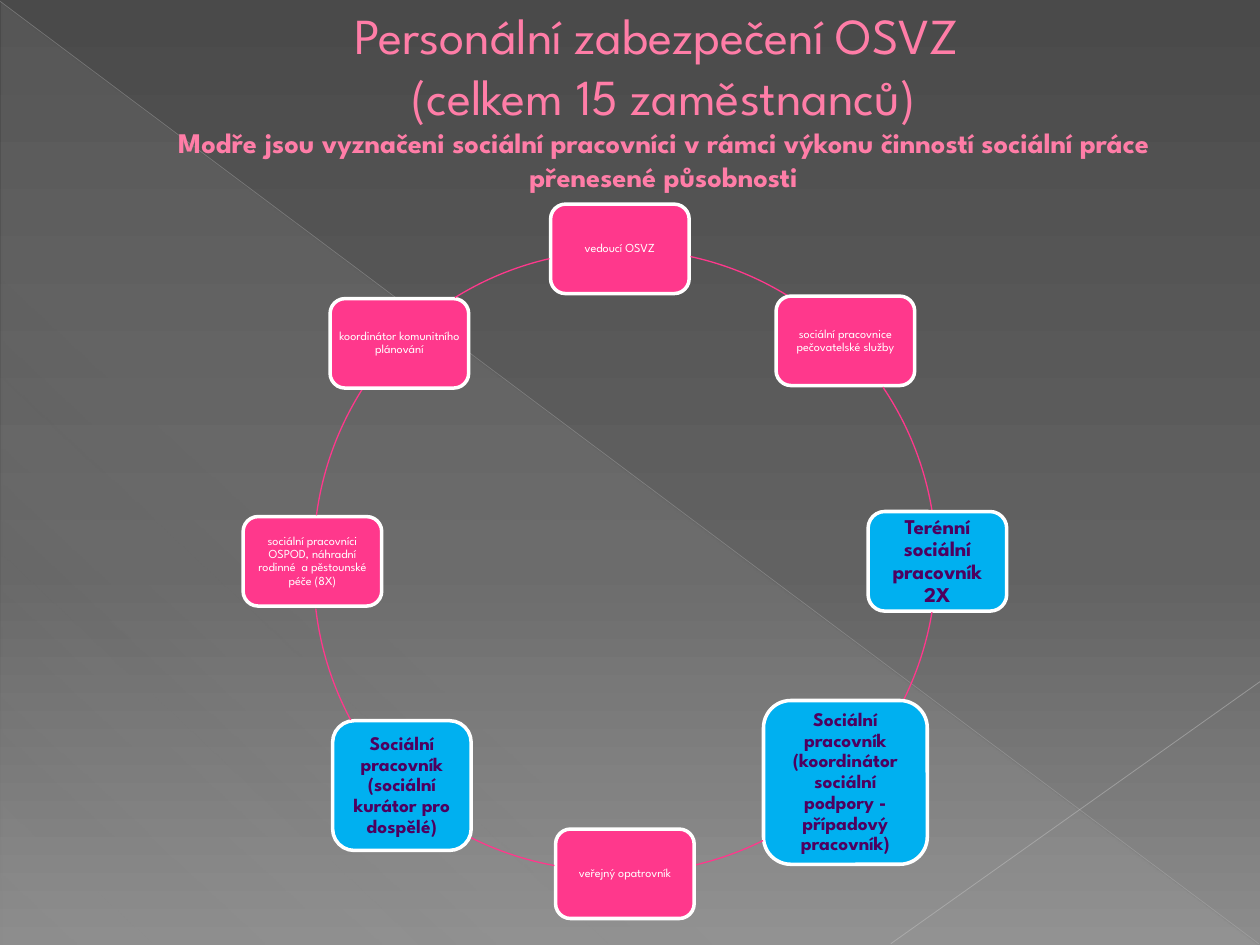
import math

from lxml import etree
from pptx import Presentation
from pptx.dml.color import RGBColor
from pptx.enum.shapes import MSO_CONNECTOR, MSO_SHAPE
from pptx.enum.text import MSO_ANCHOR, PP_ALIGN
from pptx.oxml.ns import qn
from pptx.util import Inches, Pt

FONT = "League Spartan"
PINK = RGBColor(0xFF, 0x38, 0x8C)
TITLE_PINK = RGBColor(0xFF, 0x7D, 0xA7)
BLUE = RGBColor(0x00, 0xB0, 0xF0)
PURPLE = RGBColor(0x4E, 0x00, 0x5F)
WHITE = RGBColor(0xFF, 0xFF, 0xFF)
LIGHT_GRAY = RGBColor(0xBF, 0xBF, 0xBF)
SILVER = RGBColor(0xC6, 0xC6, 0xC6)
PALE_GRAY = RGBColor(0xD2, 0xD2, 0xD2)

ROUNDED = MSO_SHAPE.ROUNDED_RECTANGLE
TRIANGLE = MSO_SHAPE.RIGHT_TRIANGLE
ARC = MSO_SHAPE.ARC
STRAIGHT = MSO_CONNECTOR.STRAIGHT
CENTER = PP_ALIGN.CENTER
MIDDLE = MSO_ANCHOR.MIDDLE

# Gradient stops: position %, colour, opacity %
BACKGROUND_STOPS = [
    (0, RGBColor(0x4A, 0x4A, 0x4A), 100),
    (60, RGBColor(0x62, 0x62, 0x62), 100),
    (100, RGBColor(0x8C, 0x8C, 0x8C), 100),
]
TRIANGLE_STOPS = [(0, PALE_GRAY, 10), (70, PALE_GRAY, 8), (100, PALE_GRAY, 1)]

# Start, end, colour, width, opacity %
DIAGONALS = [
    ((0, 0.01), (9.99, 7.49), LIGHT_GRAY, 0.39, 35),
    ((10, 5.41), (7.07, 7.49), SILVER, 0.47, 45),
]

# Text, font size, bold
TITLE = [
    ("Personální zabezpečení OSVZ \n(celkem 15 zaměstnanců)\n", 28.8, False),
    ("Modře jsou vyznačeni sociální pracovníci v rámci výkonu činností "
     "sociální práce přenesené působnosti", 16.2, True),
]

PINK_STYLE = dict(fill=PINK, color=WHITE, bold=False, inset=0.03)
BLUE_STYLE = dict(fill=BLUE, color=PURPLE, bold=True, inset=0.05)
SMALL_BOX = (1.1, 0.71)

# Text, left and top, width and height, font size, style
ROLES = [
    ("vedoucí OSVZ", (4.37, 1.62), SMALL_BOX, 7, PINK_STYLE),
    ("sociální pracovnice pečovatelské služby", (6.16, 2.35), SMALL_BOX, 7, PINK_STYLE),
    ("Terénní sociální pracovník 2X", (6.89, 4.06), (1.1, 0.79), 12, BLUE_STYLE),
    ("Sociální pracovník (koordinátor sociální podpory - případový pracovník)",
     (6.06, 5.56), (1.3, 1.3), 11, BLUE_STYLE),
    ("veřejný opatrovník", (4.41, 6.58), SMALL_BOX, 7, PINK_STYLE),
    ("Sociální pracovník (sociální kurátor pro dospělé)",
     (2.64, 5.72), (1.1, 1.03), 11, BLUE_STYLE),
    ("sociální pracovníci OSPOD, náhradní rodinné  a pěstounské péče (8X)",
     (1.93, 4.1), SMALL_BOX, 7, PINK_STYLE),
    ("koordinátor komunitního plánování", (2.62, 2.37), SMALL_BOX, 7, PINK_STYLE),
]

# Left and top of the whole circle, start, end
RING_SIZE = 4.95
RING_ARCS = [
    ((2.48, 1.98), (5.48, 2.04), (6.25, 2.35)),
    ((2.48, 1.98), (7.01, 3.07), (7.4, 4.05)),
    ((2.48, 1.98), (7.4, 4.86), (7.18, 5.55)),
    ((2.48, 1.98), (6.06, 6.68), (5.52, 6.87)),
    ((2.37, 1.96), (4.4, 6.87), (3.74, 6.65)),
    ((2.49, 2.07), (2.79, 5.71), (2.51, 4.83)),
    ((2.49, 1.94), (2.51, 4.09), (2.88, 3.09)),
    ((2.44, 1.99), (3.61, 2.36), (4.36, 2.05)),
]
# Arc angles are stored in 1/60000 degree, adjustments in 1/100000
ADJUSTMENT_PER_DEGREE = 60000 / 100000


def set_opacity(color_element, percent):
    etree.SubElement(color_element, qn("a:alpha"), val=str(percent * 1000))


def set_gradient(gradient, stops, angle):
    """Replace the contents of a gradFill element; angle is clockwise degrees."""
    for child in list(gradient):
        gradient.remove(child)
    stop_list = etree.SubElement(gradient, qn("a:gsLst"))
    for position, color, opacity in stops:
        stop = etree.SubElement(stop_list, qn("a:gs"), pos=str(position * 1000))
        color_element = etree.SubElement(stop, qn("a:srgbClr"), val=str(color))
        set_opacity(color_element, opacity)
    etree.SubElement(gradient, qn("a:lin"), ang=str(angle * 60000), scaled="0")


def write_text(paragraph, text, *, size, color, bold=False, line_spacing=None):
    """Append text to a paragraph, with a line break at each newline."""
    paragraph.alignment = CENTER
    paragraph.line_spacing = line_spacing
    for index, line in enumerate(text.split("\n")):
        if index:
            paragraph.add_line_break()
        if line:
            run = paragraph.add_run()
            run.text = line
            run.font.name = FONT
            run.font.size = Pt(size)
            run.font.bold = bold
            run.font.color.rgb = color


def add_backdrop(slide):
    slide.background.fill.gradient()
    gradient = slide.element.find(".//" + qn("p:bgPr")).find(qn("a:gradFill"))
    set_gradient(gradient, BACKGROUND_STOPS, 90)

    triangle = slide.shapes.add_shape(
        TRIANGLE, Inches(0.01), Inches(0.02), Inches(9.98), Inches(7.48))
    triangle.shadow.inherit = False
    triangle.line.fill.background()
    triangle.fill.gradient()
    set_gradient(triangle.element.spPr.find(qn("a:gradFill")), TRIANGLE_STOPS, 133)

    for start, end, color, width, opacity in DIAGONALS:
        diagonal = slide.shapes.add_connector(
            STRAIGHT, *(Inches(value) for value in start + end))
        diagonal.line.color.rgb = color
        diagonal.line.width = Pt(width)
        properties = diagonal.element.spPr
        set_opacity(properties.find(".//" + qn("a:srgbClr")), opacity)
        etree.SubElement(properties, qn("a:effectLst"))


def add_title(slide):
    frame = slide.shapes.add_textbox(
        Inches(0.5), Inches(0.16), Inches(9), Inches(1.25)).text_frame
    frame.word_wrap = True
    frame.vertical_anchor = MIDDLE
    frame.margin_left = Inches(0.63)
    for text, size, bold in TITLE:
        write_text(frame.paragraphs[0], text, size=size, color=TITLE_PINK, bold=bold)


def add_arc(slide, corner, start, end):
    """Draw the clockwise part of the ring between two points."""
    left, top = corner
    arc = slide.shapes.add_shape(
        ARC, Inches(left), Inches(top), Inches(RING_SIZE), Inches(RING_SIZE))
    for index, (x, y) in enumerate((start, end)):
        angle = math.degrees(math.atan2(y - top - RING_SIZE / 2, x - left - RING_SIZE / 2))
        arc.adjustments[index] = angle % 360 * ADJUSTMENT_PER_DEGREE
    arc.shadow.inherit = False
    arc.fill.background()
    arc.line.color.rgb = PINK
    arc.line.width = Pt(0.75)


def add_role(slide, text, position, extent, size, style):
    box = slide.shapes.add_shape(
        ROUNDED, *(Inches(value) for value in position + extent))
    box.shadow.inherit = False
    box.fill.solid()
    box.fill.fore_color.rgb = style["fill"]
    box.line.color.rgb = WHITE
    box.line.width = Pt(2)
    frame = box.text_frame
    frame.word_wrap = True
    frame.vertical_anchor = MIDDLE
    inset = Inches(style["inset"])
    frame.margin_left = frame.margin_right = inset
    frame.margin_top = frame.margin_bottom = inset
    write_text(frame.paragraphs[0], text, size=size, color=style["color"],
               bold=style["bold"], line_spacing=0.9)


def main():
    presentation = Presentation()
    presentation.slide_width = Inches(10)
    presentation.slide_height = Inches(7.5)
    slide = presentation.slides.add_slide(presentation.slide_layouts[6])
    add_backdrop(slide)
    add_title(slide)
    for role, arc in zip(ROLES, RING_ARCS):
        add_role(slide, *role)
        add_arc(slide, *arc)
    presentation.save("out.pptx")


if __name__ == "__main__":
    main()
